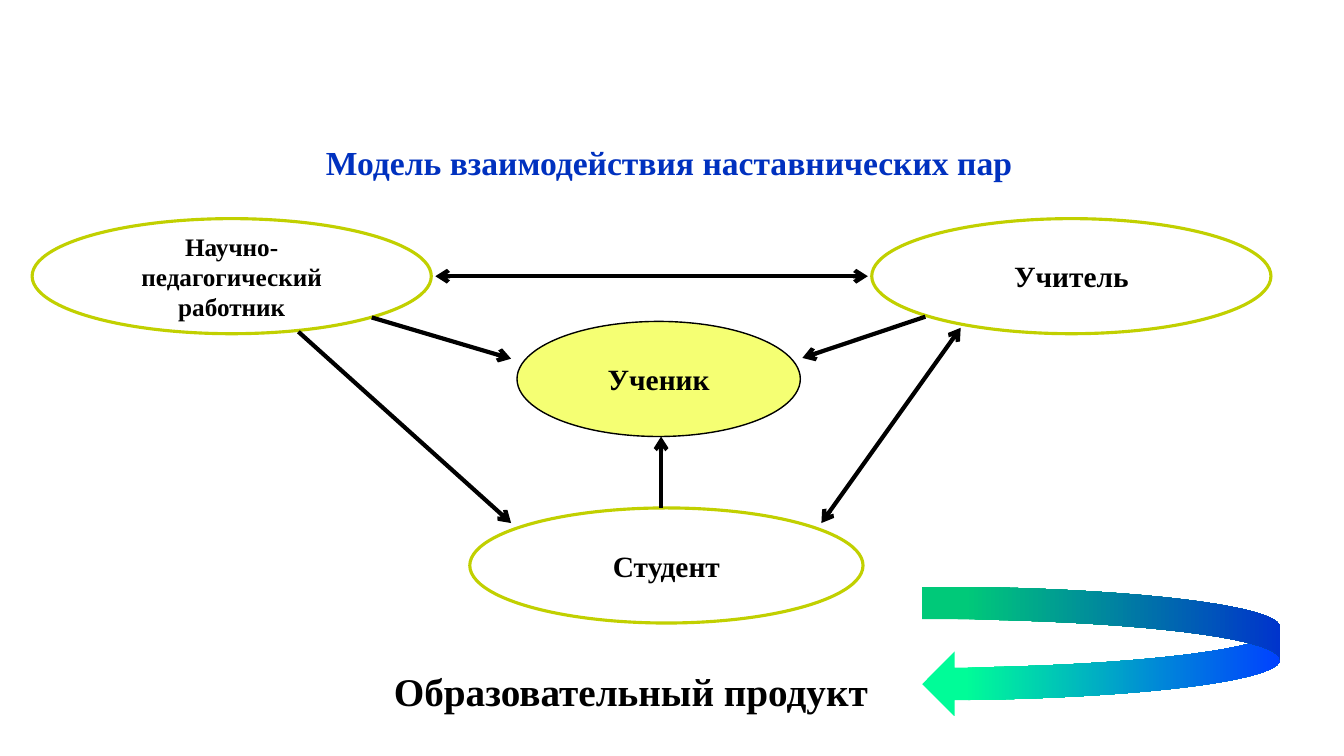
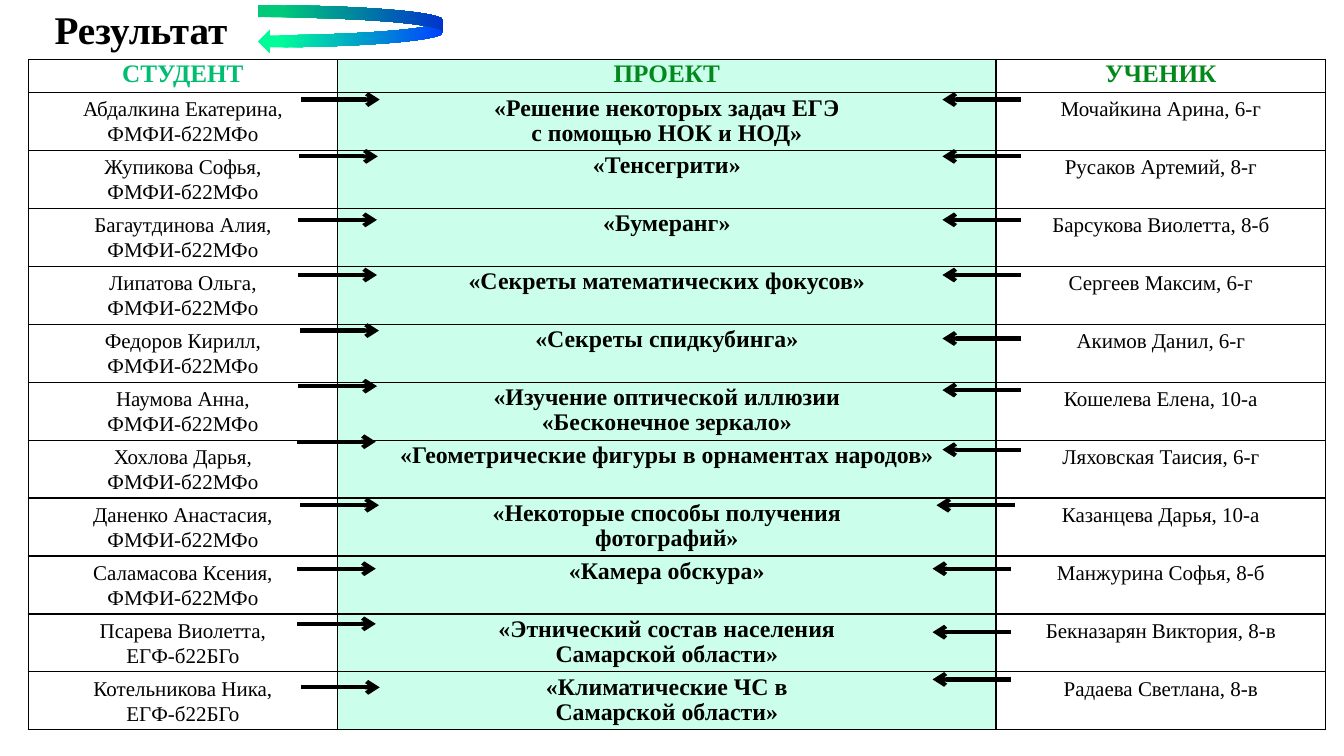
from dataclasses import dataclass

from lxml.etree import SubElement
from pptx import Presentation
from pptx.dml.color import RGBColor
from pptx.enum.shapes import MSO_CONNECTOR, MSO_SHAPE
from pptx.enum.text import MSO_ANCHOR, MSO_AUTO_SIZE, PP_ALIGN
from pptx.oxml.ns import qn
from pptx.util import Cm, Pt


@dataclass(frozen=True)
class Theme:
    font: str = "Times New Roman"
    ink: str = "000000"
    paper: str = "FFFFFF"
    title_blue: str = "0031BF"
    olive: str = "C1D000"
    pupil_yellow: str = "F5FF73"
    mint: str = "CBFFEB"
    student_green: str = "00BD72"
    header_green: str = "02881B"
    ribbon_green: str = "00FC98"
    ribbon_blue: str = "0041FF"
    headline: float = 28
    title: float = 24
    role: float = 21
    long_role: float = 18
    table_header: float = 18
    project: float = 17
    person: float = 15
    table_leading: float = 18
    arrow_width: float = 3
    grid_width: float = 1


THEME = Theme()


@dataclass(frozen=True)
class Pair:
    """One project; the arrow fields hold the starting x and y in centimetres."""
    student: str
    group: str
    project: str
    pupil: str
    student_arrow: tuple
    pupil_arrow: tuple


MATH, GEOGRAPHY = "ФМФИ-б22МФо", "ЕГФ-б22БГо"
PAIRS = [
    Pair("Абдалкина Екатерина,", MATH, "«Решение некоторых задач ЕГЭ\nс помощью НОК и НОД»",
         "Мочайкина Арина, 6-г", (7.59, 2.51), (25.73, 2.51)),
    Pair("Жупикова Софья,", MATH, "«Тенсегрити»",
         "Русаков Артемий, 8-г", (7.54, 3.94), (25.73, 3.94)),
    Pair("Багаутдинова Алия,", MATH, "«Бумеранг»",
         "Барсукова Виолетта, 8-б", (7.52, 5.54), (25.73, 5.54)),
    Pair("Липатова Ольга,", MATH, "«Секреты математических фокусов»",
         "Сергеев Максим, 6-г", (7.52, 6.93), (25.73, 6.93)),
    Pair("Федоров Кирилл,", MATH, "«Секреты спидкубинга»",
         "Акимов Данил, 6-г", (7.57, 8.33), (25.73, 8.53)),
    Pair("Наумова Анна,", MATH, "«Изучение оптической иллюзии\n«Бесконечное зеркало»",
         "Кошелева Елена, 10-а", (7.52, 9.73), (25.73, 9.83)),
    Pair("Хохлова Дарья,", MATH, "«Геометрические фигуры в орнаментах народов»",
         "Ляховская Таисия, 6-г", (7.49, 11.13), (25.73, 11.33)),
    Pair("Даненко Анастасия,", MATH, "«Некоторые способы получения\nфотографий»",
         "Казанцева Дарья, 10-а", (7.57, 12.73), (25.58, 12.73)),
    Pair("Саламасова Ксения,", MATH, "«Камера обскура»",
         "Манжурина Софья, 8-б", (7.49, 14.33), (25.48, 14.33)),
    Pair("Псарева Виолетта,", GEOGRAPHY, "«Этнический состав населения\nСамарской области»",
         "Бекназарян Виктория, 8-в", (7.49, 15.72), (25.48, 15.93)),
    Pair("Котельникова Ника,", GEOGRAPHY, "«Климатические ЧС в\nСамарской области»",
         "Радаева Светлана, 8-в", (7.59, 17.32), (25.48, 17.12)),
]


def rgb(color):
    return RGBColor.from_string(color)


def write(frame, text, size, color=THEME.ink, bold=True, align=PP_ALIGN.CENTER, spacing=None):
    frame.text = text
    for paragraph in frame.paragraphs:
        paragraph.alignment = align
        if spacing is not None:
            paragraph.line_spacing = spacing
        for run in paragraph.runs:
            run.font.name = THEME.font
            run.font.size = Pt(size)
            run.font.bold = bold
            run.font.color.rgb = rgb(color)


def set_title(slide, box, text, size, color=THEME.ink, align=PP_ALIGN.CENTER,
              anchor=MSO_ANCHOR.MIDDLE, spacing=None):
    title = slide.shapes.title
    title.left, title.top, title.width, title.height = (Cm(value) for value in box)
    frame = title.text_frame
    frame.auto_size = MSO_AUTO_SIZE.NONE
    frame.vertical_anchor = anchor
    write(frame, text, size, color, align=align, spacing=spacing)


def add_role(slide, box, text, size=THEME.role, fill=THEME.paper, line=THEME.olive, width=2.25):
    """Draw the oval of one participant."""
    oval = slide.shapes.add_shape(MSO_SHAPE.OVAL, *(Cm(value) for value in box))
    oval.shadow.inherit = False
    oval.fill.solid()
    oval.fill.fore_color.rgb = rgb(fill)
    oval.line.color.rgb = rgb(line)
    oval.line.width = Pt(width)
    oval.text_frame.word_wrap = True
    oval.text_frame.vertical_anchor = MSO_ANCHOR.MIDDLE
    write(oval.text_frame, text, size)


def add_arrow(slide, start, end, both_ways=False):
    arrow = slide.shapes.add_connector(
        MSO_CONNECTOR.STRAIGHT, *(Cm(value) for value in (*start, *end)))
    arrow.line.color.rgb = rgb(THEME.ink)
    arrow.line.width = Pt(THEME.arrow_width)
    properties = arrow.line._get_or_add_ln()
    for tip in ("a:headEnd", "a:tailEnd") if both_ways else ("a:tailEnd",):
        SubElement(properties, qn(tip), type="arrow")
    SubElement(properties.getparent(), qn("a:effectLst"))


def add_ribbon(slide, box):
    """Draw the gradient arrow that curves back to the left."""
    ribbon = slide.shapes.add_shape(MSO_SHAPE.CURVED_LEFT_ARROW, *(Cm(value) for value in box))
    ribbon.shadow.inherit = False
    ribbon.line.fill.background()
    ribbon.fill.gradient()
    ribbon.fill.gradient_angle = 0
    colors = ((0.12, THEME.ribbon_green), (1, THEME.ribbon_blue))
    for stop, (position, color) in zip(ribbon.fill.gradient_stops, colors):
        stop.position = position
        stop.color.rgb = rgb(color)


def add_caption(slide, box, text):
    caption = slide.shapes.add_textbox(*(Cm(value) for value in box))
    caption.text_frame.word_wrap = False
    caption.text_frame.auto_size = MSO_AUTO_SIZE.SHAPE_TO_FIT_TEXT
    write(caption.text_frame, text, THEME.headline, align=PP_ALIGN.LEFT)


def add_borders(cell):
    properties = cell._tc.get_or_add_tcPr()
    for side in ("a:lnL", "a:lnR", "a:lnT", "a:lnB"):
        border = SubElement(properties, qn(side), w=str(Pt(THEME.grid_width)))
        SubElement(SubElement(border, qn("a:solidFill")), qn("a:srgbClr"), val=THEME.ink)


def fill_cell(cell, text, size, color=THEME.ink, bold=True, fill=None):
    add_borders(cell)
    if fill:
        cell.fill.solid()
        cell.fill.fore_color.rgb = rgb(fill)
    else:
        cell.fill.background()
    cell.margin_top = cell.margin_bottom = Cm(0.09)
    write(cell.text_frame, text, size, color, bold, spacing=Pt(THEME.table_leading))


def add_project_table(slide, left, top, widths, header_height, row_height):
    table = slide.shapes.add_table(
        len(PAIRS) + 1, len(widths), Cm(left), Cm(top), Cm(sum(widths)),
        Cm(header_height + row_height * len(PAIRS))).table
    table.first_row = table.horz_banding = False
    for column, width in zip(table.columns, widths):
        column.width = Cm(width)
    for index, row in enumerate(table.rows):
        row.height = Cm(row_height if index else header_height)

    fills = (None, THEME.mint, None)
    headers = (("СТУДЕНТ", THEME.student_green), ("ПРОЕКТ", THEME.header_green),
               ("УЧЕНИК", THEME.header_green))
    for column, (text, color) in enumerate(headers):
        fill_cell(table.cell(0, column), text, THEME.table_header, color, fill=fills[column])
    for row, pair in enumerate(PAIRS, 1):
        texts = (f"{pair.student}\n{pair.group}", pair.project, pair.pupil)
        for column, text in enumerate(texts):
            is_project = column == 1
            fill_cell(table.cell(row, column), text,
                      THEME.project if is_project else THEME.person,
                      bold=is_project, fill=fills[column])


def build_model(slide):
    set_title(slide, (4.39, 3.45, 24.94, 1.37), "Модель взаимодействия наставнических пар",
              THEME.title, THEME.title_blue, spacing=0.9)
    add_role(slide, (13.03, 8.1, 7.14, 2.9), "Ученик",
             fill=THEME.pupil_yellow, line=THEME.ink, width=1)
    add_role(slide, (11.84, 12.8, 9.91, 2.9), "Студент")
    add_role(slide, (0.81, 5.51, 10.06, 2.9), "Научно-педагогический работник", THEME.long_role)
    add_role(slide, (21.97, 5.51, 10.06, 2.9), "Учитель")

    add_arrow(slide, (21.87, 6.96), (10.97, 6.96), both_ways=True)
    add_arrow(slide, (24.21, 8.26), (20.7, 13.18), both_ways=True)
    add_arrow(slide, (7.52, 8.36), (12.88, 13.18))
    add_arrow(slide, (9.37, 8), (12.88, 9.04))
    add_arrow(slide, (23.32, 7.98), (20.22, 9.02))
    add_arrow(slide, (16.66, 12.8), (16.66, 11))

    add_ribbon(slide, (23.24, 14.78, 9.02, 3.28))
    add_caption(slide, (9.68, 16.69, 12.57, 1.45), "Образовательный продукт")


def build_results(slide):
    set_title(slide, (1.12, 0, 9.42, 1.45), "Результат", THEME.headline,
              align=PP_ALIGN.LEFT, anchor=MSO_ANCHOR.TOP)
    add_project_table(slide, 0.71, 1.5, (7.8, 16.59, 8.31), 0.83, 1.46)
    arrow_length = 1.98
    for pair in PAIRS:
        for (x, y), direction in ((pair.student_arrow, 1), (pair.pupil_arrow, -1)):
            add_arrow(slide, (x, y), (x + direction * arrow_length, y))
    add_ribbon(slide, (6.5, 0.13, 4.67, 1.22))


def main():
    presentation = Presentation()
    presentation.slide_width, presentation.slide_height = Cm(33.87), Cm(19.05)
    title_only = presentation.slide_layouts[5]
    for build in (build_model, build_results):
        build(presentation.slides.add_slide(title_only))
    presentation.save("out.pptx")


if __name__ == "__main__":
    main()
